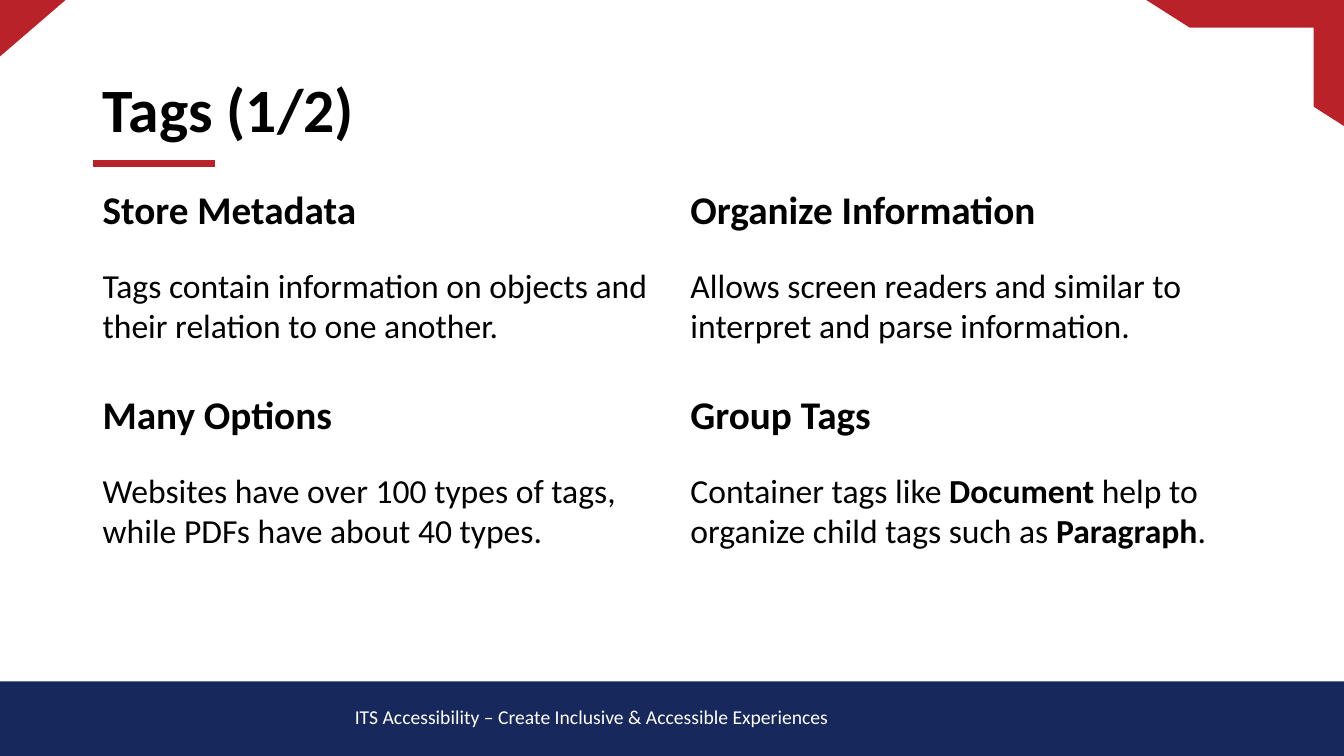
import pptx
import pptx.util
import pptx.dml.color
import pptx.enum.shapes
import pptx.enum.text
import pptx.oxml
from dataclasses import dataclass

SHAPE = pptx.enum.shapes.MSO_SHAPE
ANCHOR = pptx.enum.text.MSO_ANCHOR
ALIGN = pptx.enum.text.PP_ALIGN
SCALE = 9144  # EMU in one px, 100 px to the inch
WIDE, HIGH = 1333, 750


def px(*nums):
    return [pptx.util.Emu(num * SCALE) for num in nums]


@dataclass(frozen=True)
class Theme:
    font: str = "Calibri"
    ink: str = "000000"
    pale: str = "FFFFFF"
    navy: str = "17295C"
    red: str = "BA2229"
    title: int = 44
    head: int = 28
    body: int = 24
    foot: int = 14
    rule: int = 5


class Deck:
    def __init__(self, theme):
        self.theme = theme
        self.prs = pptx.Presentation()
        self.prs.slide_width, self.prs.slide_height = px(WIDE, HIGH)
        self.slide = self.prs.slides.add_slide(self.prs.slide_layouts[5])

    def tint(self, color):
        return pptx.dml.color.RGBColor.from_string(color)

    def fill(self, box, text, size, color, bold=False, anchor=ANCHOR.TOP, lead=None):
        """Write text into a box; every second part between asterisks is bold."""
        frame = box.text_frame
        frame.word_wrap = True
        frame.auto_size = pptx.enum.text.MSO_AUTO_SIZE.NONE
        frame.vertical_anchor = anchor
        para = frame.paragraphs[0]
        para.alignment = ALIGN.LEFT
        para.line_spacing = lead
        para.font.name = self.theme.font
        para.font.size = pptx.util.Pt(size)
        para.font.bold = bold
        para.font.color.rgb = self.tint(color)
        for spot, part in enumerate(text.split("*")):
            run = para.add_run()
            run.text = part
            if spot % 2:
                run.font.bold = True

    def title(self, text, *area):
        box = self.slide.shapes.title
        box.left, box.top, box.width, box.height = px(*area)
        self.fill(box, text, self.theme.title, self.theme.ink, bold=True, lead=0.9)

    def text(self, text, area, size, color, **style):
        box = self.slide.shapes.add_textbox(*px(*area))
        self.fill(box, text, size, color, **style)

    def shape(self, kind, area, color, adjust=()):
        item = self.slide.shapes.add_shape(kind, *px(*area))
        item.shadow.inherit = False
        item.fill.solid()
        item.fill.fore_color.rgb = self.tint(color)
        item.line.fill.background()
        for spot, value in enumerate(adjust):
            item.adjustments[spot] = value
        return item

    def rule(self, left, right, top, color):
        line = self.slide.shapes.add_connector(
            pptx.enum.shapes.MSO_CONNECTOR.STRAIGHT, *px(left, top, right, top))
        line.line.color.rgb = self.tint(color)
        line.line.width = pptx.util.Pt(self.theme.rule)
        line._element.spPr.append(pptx.oxml.parse_xml(
            '<a:effectLst xmlns:a="http://schemas.openxmlformats.org/drawingml/2006/main"/>'))

    def topic(self, head, body, left, top, width):
        """Place a bold heading with its text below."""
        look = self.theme
        self.text(head, (left, top, width, 52), look.head, look.ink,
                  bold=True, anchor=ANCHOR.BOTTOM, lead=0.9)
        self.text(body, (left, top + 74, width, 94), look.body, look.ink)


TOPICS = [
    ("Store Metadata",
     "Tags contain information on objects and their relation to one another."),
    ("Organize Information",
     "Allows screen readers and similar to interpret and parse information."),
    ("Many Options",
     "Websites have over 100 types of tags, while PDFs have about 40 types."),
    ("Group Tags",
     "Container tags like *Document* help to organize child tags such as *Paragraph*."),
]
COLS = [(92, 564), (675, 567)]
TOP, STEP = 184, 203


def main():
    look = Theme()
    deck = Deck(look)
    deck.shape(SHAPE.RECTANGLE, (0, 676, WIDE, 74), look.navy)
    deck.rule(92, 213, 162, look.red)
    deck.title("Tags (1/2)", 92, 74, 1150, 87)

    for spot, (head, body) in enumerate(TOPICS):
        row, col = divmod(spot, len(COLS))
        left, width = COLS[col]
        deck.topic(head, body, left, TOP + row * STEP, width)

    frame = deck.shape(SHAPE.HALF_FRAME, (1137, 0, 196, 125), look.red, (0.22, 0.24))
    frame._element.spPr.xfrm.set("flipH", "1")
    corner = deck.shape(SHAPE.ISOSCELES_TRIANGLE, (0, 0, 65, 56), look.red, (1,))
    corner.rotation = 180

    deck.text("ITS Accessibility – Create Inclusive & Accessible Experiences",
              (342, 694, 899, 37), look.foot, look.pale, anchor=ANCHOR.MIDDLE, lead=0.9)
    deck.prs.save("out.pptx")


if __name__ == "__main__":
    main()
